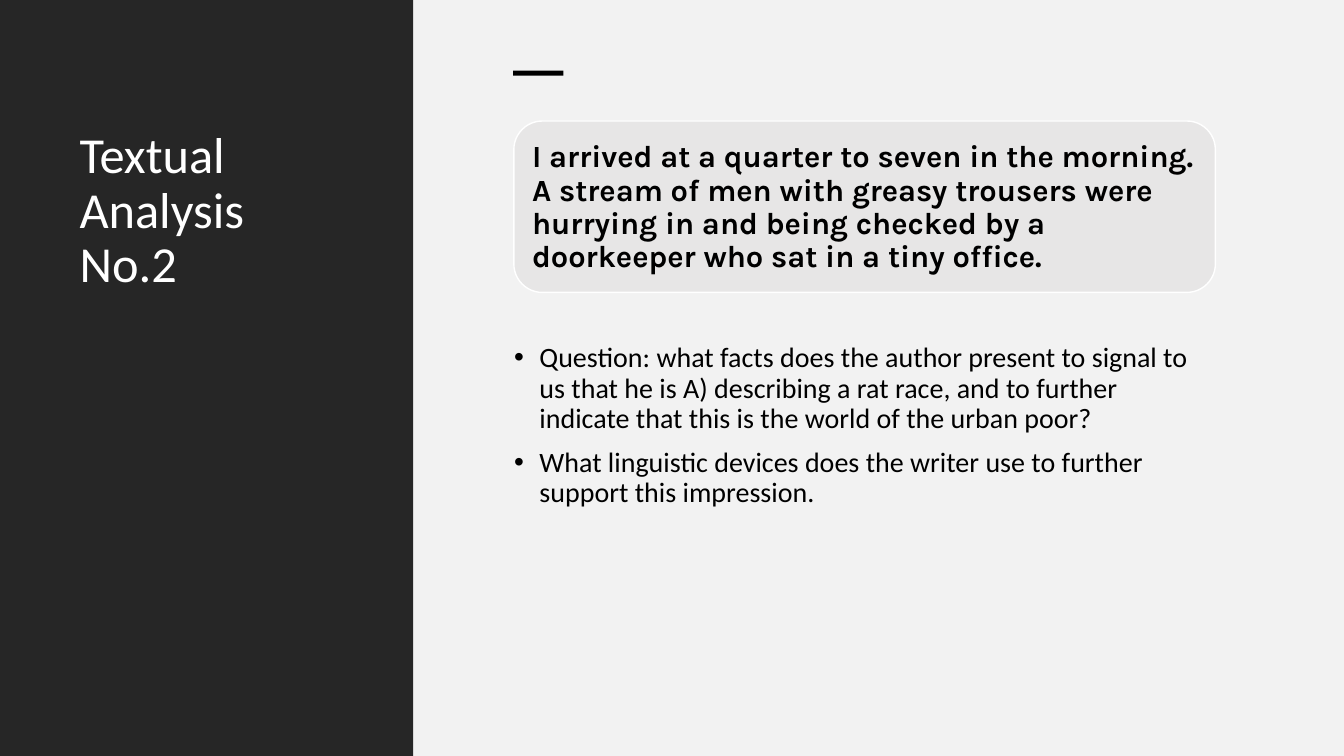
"""Build the textual analysis slide with a dark title panel and a quote card."""
from typing import NamedTuple

from pptx import Presentation, util as u
from pptx.dml.color import RGBColor
from pptx.enum import shapes, text


class Block(NamedTuple):
    left: float
    top: float
    width: float
    height: float
    fill: str = ""
    line: str = ""
    kind: shapes.MSO_SHAPE = shapes.MSO_SHAPE.RECTANGLE


class Style(NamedTuple):
    font: dict
    color: str
    paragraph: dict
    frame: dict


PANELS = [
    Block(10.4, 0, 23.47, 19.05, "F2F2F2"),
    Block(0, 0, 10.41, 19.05, "262626"),
    Block(12.93, 1.78, 1.27, 0.13, "000000"),
]
CARD = Block(12.95, 3.05, 17.68, 4.32, "E7E6E6", "FFFFFF", shapes.MSO_SHAPE.ROUNDED_RECTANGLE)
QUOTE = Block(13.18, 3.28, 17.27, 3.91)
TITLE = Block(1.75, 3.15, 6.1, 15.49)
BODY = Block(12.7, 8.53, 17.75, 14.81)

LEFT = text.PP_ALIGN.LEFT
FRAME = {
    "word_wrap": True,
    "auto_size": text.MSO_AUTO_SIZE.NONE,
    "vertical_anchor": text.MSO_ANCHOR.TOP,
}
INSETS = {f"margin_{side}": u.Cm(0.23) for side in ("left", "top", "right", "bottom")}
TIGHT = {"alignment": LEFT, "line_spacing": 0.9}

TITLE_STYLE = Style({"name": "Calibri", "size": u.Pt(36)}, "FFFFFF", TIGHT, FRAME)
BODY_STYLE = Style(
    {"name": "Calibri", "size": u.Pt(20)}, "000000", TIGHT | {"space_before": u.Pt(10)}, FRAME
)
QUOTE_STYLE = Style(
    {"name": "Karla", "size": u.Pt(22), "bold": True},
    "000000",
    TIGHT,
    FRAME | INSETS | {"vertical_anchor": text.MSO_ANCHOR.MIDDLE},
)

QUOTE_TEXT = (
    "I arrived at a quarter to seven in the morning. A stream of men with greasy trousers "
    "were hurrying in and being checked by a doorkeeper who sat in a tiny office."
)
QUESTIONS = [
    "Question: what facts does the author present to signal to us that he is A) describing "
    "a rat race, and to further indicate that this is the world of the urban poor?",
    "What linguistic devices does the writer use to further support this impression.",
]


def color(value: str) -> RGBColor:
    """Turn a hex string into a colour."""
    return RGBColor.from_string(value)


def apply(target, values: dict) -> None:
    """Set each named attribute on the target."""
    for name, value in values.items():
        setattr(target, name, value)


def bounds(block: Block) -> list[u.Cm]:
    """Give left, top, width and height as lengths."""
    return [u.Cm(value) for value in block[:4]]


def draw_block(container, block: Block) -> None:
    """Draw one filled shape, outlined only when it names a line colour."""
    box = container.add_shape(block.kind, *bounds(block))
    box.shadow.inherit = False
    box.fill.solid()
    box.fill.fore_color.rgb = color(block.fill)
    if block.line:
        box.line.color.rgb = color(block.line)
        box.line.width = u.Pt(1)
    else:
        box.line.fill.background()


def write(box, lines: list[str], style: Style) -> None:
    """Fill a text frame with styled paragraphs."""
    frame = box.text_frame
    apply(frame, style.frame)
    for index, line in enumerate(lines):
        para = frame.add_paragraph() if index else frame.paragraphs[0]
        apply(para, style.paragraph)
        span = para.add_run()
        span.text = line
        apply(span.font, style.font)
        span.font.color.rgb = color(style.color)


def place(holder, block: Block) -> None:
    """Move a placeholder to its block and in front of what is drawn so far."""
    apply(holder, dict(zip(("left", "top", "width", "height"), bounds(block))))
    holder.element.getparent().append(holder.element)


def main() -> None:
    """Assemble and save the deck."""
    deck = Presentation()
    deck.slide_width, deck.slide_height = u.Cm(33.87), u.Cm(19.05)
    page = deck.slides.add_slide(deck.slide_layouts[1])
    for panel in PANELS:
        draw_block(page.shapes, panel)

    title, body = page.shapes.title, page.placeholders[1]
    place(title, TITLE)
    write(title, ["Textual Analysis No.2"], TITLE_STYLE)
    place(body, BODY)
    write(body, QUESTIONS, BODY_STYLE)
    for para in body.text_frame.paragraphs:
        indent = u.Cm(0.64)
        properties = para._p.get_or_add_pPr()
        properties.set("marL", str(indent))
        properties.set("indent", str(-indent))

    group = page.shapes.add_group_shape()
    draw_block(group.shapes, CARD)
    write(group.shapes.add_textbox(*bounds(QUOTE)), [QUOTE_TEXT], QUOTE_STYLE)
    deck.save("out.pptx")


if __name__ == "__main__":
    main()
